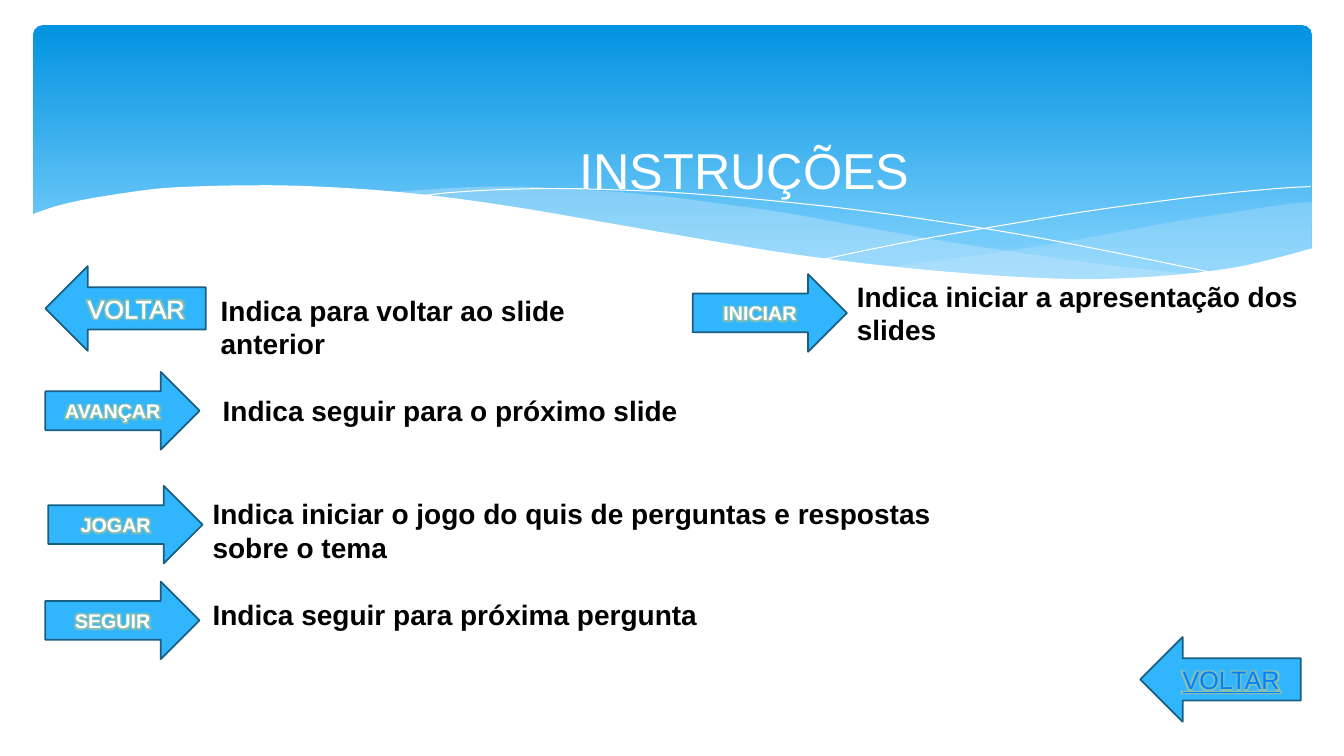
from lxml.etree import SubElement
from pptx import Presentation
from pptx.dml.color import RGBColor
from pptx.enum.shapes import MSO_SHAPE
from pptx.enum.text import MSO_ANCHOR, PP_ALIGN
from pptx.oxml import parse_xml
from pptx.oxml.ns import qn
from pptx.util import Inches, Pt

DRAWING = 'xmlns:a="http://schemas.openxmlformats.org/drawingml/2006/main"'
OUTLINE = f'<a:ln {DRAWING} w="9525"><a:solidFill><a:srgbClr val="FFFFFF"/></a:solidFill></a:ln>'
GLOW = (f'<a:effectLst {DRAWING}><a:glow rad="63500"><a:srgbClr val="C8C77A">'
        '<a:alpha val="60000"/></a:srgbClr></a:glow></a:effectLst>')

RIGHT_RIBBON_TOP = [(13.01, 2), (12.65, 2.04), (12.27, 2.1), (11.88, 2.16), (11.47, 2.23), (10.73, 2.37),
                    (10.05, 2.48), (9.41, 2.57), (8.82, 2.65)]
RIGHT_RIBBON_BOTTOM = [(8.82, 2.65), (9.21, 2.69), (9.58, 2.72), (9.93, 2.75), (10.25, 2.77), (10.71, 2.78),
                       (11.13, 2.77), (11.51, 2.75), (11.86, 2.72), (12.18, 2.67), (12.57, 2.59), (13.01, 2.47)]
LEFT_RIBBON_TOP = [(11.9, 2.73), (11.16, 2.65), (10.34, 2.54), (9.41, 2.4), (8.39, 2.22), (7.78, 2.11),
                   (7.21, 2.03), (6.69, 1.96), (6.19, 1.91), (5.6, 1.87), (5.06, 1.85), (4.59, 1.86), (3.82, 1.91)]
LEFT_RIBBON_BOTTOM = [(3.82, 1.91), (4.31, 1.96), (4.83, 2.03), (5.39, 2.11), (5.99, 2.22), (7.06, 2.4),
                      (7.79, 2.52), (8.46, 2.61), (9.07, 2.68), (9.63, 2.74), (10.14, 2.77), (10.76, 2.78),
                      (11.31, 2.77), (11.9, 2.73)]
FALLING_LINE = [(4.12, 1.95), (4.47, 1.91), (4.99, 1.88), (5.55, 1.87), (6, 1.88), (6.52, 1.9), (7.1, 1.94),
                (7.75, 2), (8.48, 2.08), (9.27, 2.19), (10.14, 2.33), (11.08, 2.51), (12.1, 2.72)]
RISING_LINE = [(8.18, 2.57), (8.7, 2.46), (9.27, 2.35), (9.97, 2.23), (10.75, 2.1), (11.55, 1.99),
               (12.13, 1.92), (12.67, 1.87), (13, 1.85)]
WHITE_WAVE = [(13.03, 2.46), (12.66, 2.56), (12.27, 2.65), (11.83, 2.71), (11.34, 2.75), (10.78, 2.77),
              (10.15, 2.75), (9.44, 2.7), (8.63, 2.62), (7.72, 2.5), (6.71, 2.33), (5.96, 2.2), (5.21, 2.07),
              (4.53, 1.97), (3.9, 1.9), (3.33, 1.86), (2.82, 1.84), (2.35, 1.84), (1.94, 1.85), (1.58, 1.87),
              (1.27, 1.91), (1.01, 1.95), (0.79, 1.99), (0.54, 2.05), (0.31, 2.13)]
WAVE_BASE = [(0.31, 3.29), (13.03, 3.29)]

NOTES = [
    ("Indica para voltar ao slide anterior", (2.09, 2.86, 4.72, 0.44), False),
    ("Indica seguir para o próximo slide", (2.11, 3.85, 4.75, 0.44), False),
    ("Indica iniciar o jogo do quis de perguntas e respostas sobre o tema", (2.01, 4.88, 7.9, 0.77), True),
    ("Indica seguir para próxima pergunta", (2.01, 5.88, 5.12, 0.44), False),
    ("Indica iniciar a apresentação dos slides", (8.4, 2.72, 4.94, 0.77), True),
]
BACK_ARROWS = [(0.45, 2.64, "FFFFFF", False), (11.31, 6.32, "0080FF", True)]
FORWARD_ARROWS = [("INICIAR", 6.87, 2.72), ("AVANÇAR", 0.45, 3.69), ("JOGAR", 0.48, 4.82), ("SEGUIR", 0.45, 5.77)]


def color(value):
    return RGBColor.from_string(value)


def smooth(points, steps=4):
    padded = [points[0], *points, points[-1]]
    curve = [points[0]]
    for before, start, end, after in zip(padded, padded[1:], padded[2:], padded[3:]):
        for step in range(1, steps + 1):
            t = step / steps
            curve.append(tuple(
                b + (c - a) * t / 2 + (2 * a - 5 * b + 4 * c - d) * t ** 2 / 2
                + (3 * b - a - 3 * c + d) * t ** 3 / 2
                for a, b, c, d in zip(before, start, end, after)))
    return curve


class InstructionSlide:
    """Draws the instruction slide's elements in one shared style."""

    def __init__(self, page):
        self.page = page
        self.font = "Arial"
        self.arrow_fill = "31B6FD"
        self.arrow_line = "195F84"

    def add_span(self, box, text, text_color, align=PP_ALIGN.LEFT, **formats):
        para = box.text_frame.paragraphs[0]
        para.alignment = align
        span = para.add_run()
        span.text = text
        for name, value in {"name": self.font, **formats}.items():
            setattr(span.font, name, value)
        span.font.color.rgb = color(text_color)

    def banner(self):
        banner = self.page.shapes.add_shape(
            MSO_SHAPE.ROUNDED_RECTANGLE, Inches(0.33), Inches(0.25), Inches(12.68), Inches(2.7))
        banner.adjustments[0] = 0.034
        banner.shadow.inherit = False
        banner.line.fill.background()
        banner.fill.gradient()
        banner.fill.gradient_angle = 270
        for stop, position, shade in zip(banner.fill.gradient_stops, (0, 0.9), ("0293E0", "83D3FE")):
            stop.position = position
            stop.color.rgb = color(shade)

    def outline(self, points, closed):
        corners = [(Inches(x), Inches(y)) for x, y in points]
        builder = self.page.shapes.build_freeform(*corners[0])
        builder.add_line_segments(corners[1:], close=closed)
        shape = builder.convert_to_shape()
        shape.shadow.inherit = False
        return shape

    def ribbon(self, points, fill, opacity=100):
        shape = self.outline(points, True)
        shape.line.fill.background()
        shape.fill.solid()
        shape.fill.fore_color.rgb = color(fill)
        if opacity < 100:
            tint = next(shape.element.iter(qn("a:srgbClr")))
            SubElement(tint, qn("a:alpha")).set("val", str(opacity * 1000))

    def thread(self, points):
        shape = self.outline(points, False)
        shape.fill.background()
        shape.line.color.rgb = color("FFFFFF")
        shape.line.width = Pt(0)

    def label(self, text, place, text_color="000000", wrap=True, anchor=MSO_ANCHOR.TOP, **formats):
        box = self.page.shapes.add_textbox(*map(Inches, place))
        box.text_frame.word_wrap = wrap
        box.text_frame.vertical_anchor = anchor
        self.add_span(box, text, text_color, **formats)

    def arrow(self, kind, text, place, text_color="FFFFFF", outlined=False, **formats):
        shape = self.page.shapes.add_shape(kind, *map(Inches, place))
        shape.shadow.inherit = False
        shape.fill.solid()
        shape.fill.fore_color.rgb = color(self.arrow_fill)
        shape.line.color.rgb = color(self.arrow_line)
        shape.line.width = Pt(1.25)
        shape.text_frame.vertical_anchor = MSO_ANCHOR.MIDDLE
        self.add_span(shape, text, text_color, PP_ALIGN.CENTER, **formats)
        properties = next(shape.element.iter(qn("a:rPr")))
        properties.find(qn("a:solidFill")).addnext(parse_xml(GLOW))
        if outlined:
            properties.insert(0, parse_xml(OUTLINE))


def main():
    deck = Presentation()
    deck.slide_width, deck.slide_height = Inches(13.33), Inches(7.5)
    slide = InstructionSlide(deck.slides.add_slide(deck.slide_layouts[6]))
    slide.banner()
    slide.ribbon(smooth(RIGHT_RIBBON_TOP) + smooth(RIGHT_RIBBON_BOTTOM), "C6E7FC", 29)
    slide.ribbon(smooth(LEFT_RIBBON_TOP) + smooth(LEFT_RIBBON_BOTTOM), "C6E7FC", 40)
    slide.thread(smooth(FALLING_LINE))
    slide.thread(smooth(RISING_LINE))
    slide.ribbon(smooth(WHITE_WAVE) + WAVE_BASE, "FFFFFF")
    slide.label("INSTRUÇÕES", (2.7, 0.8, 9.37, 1.75), "FFFFFF", anchor=MSO_ANCHOR.MIDDLE,
                align=PP_ALIGN.CENTER, size=Pt(36))
    for text, place, wrap in NOTES:
        slide.label(text, place, wrap=wrap, size=Pt(20), bold=True)
    for left, top, text_color, underline in BACK_ARROWS:
        slide.arrow(MSO_SHAPE.LEFT_ARROW, "VOLTAR", (left, top, 1.59, 0.84), text_color, True,
                    size=Pt(18), underline=underline)
    for text, left, top in FORWARD_ARROWS:
        slide.arrow(MSO_SHAPE.RIGHT_ARROW, text, (left, top, 1.53, 0.77), size=Pt(14), bold=True)
    deck.save("out.pptx")


if __name__ == "__main__":
    main()
